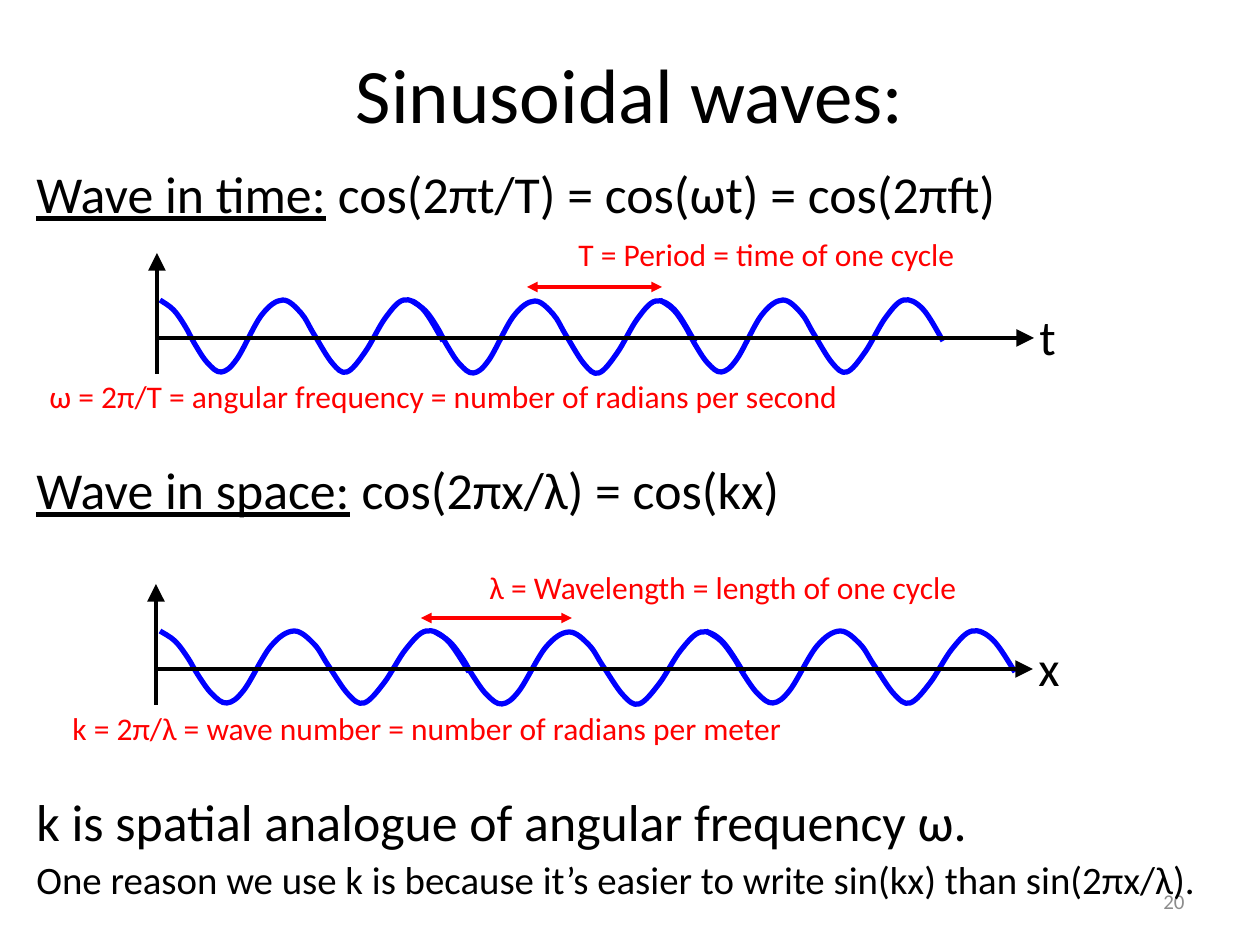
"""Build the slide on sinusoidal waves in time and in space."""
from lxml import etree
from pptx import Presentation
from pptx.dml.color import RGBColor
from pptx.enum.shapes import MSO_CONNECTOR
from pptx.enum.text import MSO_ANCHOR, PP_ALIGN
from pptx.oxml.ns import qn
from pptx.util import Inches, Pt

BLACK = RGBColor(0x00, 0x00, 0x00)
BLUE = RGBColor(0x00, 0x00, 0xFF)
RED = RGBColor(0xFF, 0x00, 0x00)
GRAY = RGBColor(0x8C, 0x8C, 0x8C)
STRAIGHT = MSO_CONNECTOR.STRAIGHT
TOP, MIDDLE = MSO_ANCHOR.TOP, MSO_ANCHOR.MIDDLE
LEFT, CENTER, RIGHT = PP_ALIGN.LEFT, PP_ALIGN.CENTER, PP_ALIGN.RIGHT

FONT = "Calibri"
PX_PER_INCH = 126
CURVE_WIDTH = 309
CURVE = [(0, 1), (15, 11), (28, 28), (38, 45), (52, 64), (67, 73),
         (84, 60), (111, 16), (134, 1), (154, 14), (168, 35), (188, 64),
         (204, 73), (224, 53), (246, 19), (266, 1), (287, 10), (309, 42)]

BODY = [
    ("Wave in time:", " cos(2πt/T) = cos(ωt) = cos(2πft)", 29.6, 0),
    ("Wave in space:", " cos(2πx/λ) = cos(kx)", 29.6, 137),
    ("", "k is spatial analogue of angular frequency ω.", 29.6, 157.5),
    ("", "One reason we use k is because it’s easier to write sin(kx) than sin(2πx/λ).", 22.2, 5),
]


def px(n):
    return round(n * Inches(1) / PX_PER_INCH)


class WaveSlide:
    """Holds the style and the current slide, and draws each kind of element."""

    def __init__(self, slide):
        self.slide = slide
        self.shapes = slide.shapes

    def start_group(self):
        self.shapes = self.slide.shapes.add_group_shape().shapes

    def style(self, r, size, color, underline=False):
        r.font.name = FONT
        r.font.size = Pt(size)
        r.font.color.rgb = color
        r.font.underline = underline

    def frame(self, x, y, w, h, anchor=TOP):
        tf = self.shapes.add_textbox(px(x), px(y), px(w), px(h)).text_frame
        tf.word_wrap = True
        tf.vertical_anchor = anchor
        return tf

    def text(self, x, y, w, h, text, size, color, align=LEFT, anchor=TOP):
        tf = self.frame(x, y, w, h, anchor)
        tf.text = text
        p = tf.paragraphs[0]
        p.alignment = align
        self.style(p.runs[0], size, color)

    def body(self, x, y, w, h, lines):
        tf = self.frame(x, y, w, h)
        for i, (label, rest, size, gap) in enumerate(lines):
            p = tf.add_paragraph() if i else tf.paragraphs[0]
            p.line_spacing = 0.9
            p.space_before = Pt(gap)
            for text, underline in ((label, True), (rest, False)):
                if text:
                    r = p.add_run()
                    r.text = text
                    self.style(r, size, BLACK, underline)

    def arrow(self, x1, y1, x2, y2, color, ends=("tailEnd",), head="med"):
        c = self.shapes.add_connector(STRAIGHT, px(x1), px(y1), px(x2), px(y2))
        c.line.color.rgb = color
        c.line.width = Pt(2)
        ln = c.line._get_or_add_ln()
        for end in ends:
            etree.SubElement(ln, qn("a:" + end), type="triangle", w=head, len=head)
        etree.SubElement(c._element.spPr, qn("a:effectLst"))

    def curve(self, x, y, w):
        points = [(px(x + u * w / CURVE_WIDTH), px(y + v)) for u, v in CURVE]
        builder = self.shapes.build_freeform(*points[0])
        builder.add_line_segments(points[1:], close=False)
        sp = builder.convert_to_shape()
        self.smooth(sp, points)
        sp.shadow.inherit = False
        sp.fill.background()
        sp.line.color.rgb = BLUE
        sp.line.width = Pt(3)

    def smooth(self, sp, points):
        padded = [points[0], *points, points[-1]]
        segments = list(sp._element.iter(qn("a:lnTo")))
        for segment, a, b, c, d in zip(segments, padded, padded[1:], padded[2:], padded[3:]):
            segment.tag = qn("a:cubicBezTo")
            controls = [[q + (t - s) / 6 for q, s, t in zip(b, a, c)],
                        [q - (t - s) / 6 for q, s, t in zip(c, b, d)]]
            for i, (cx, cy) in enumerate(controls):
                pt = etree.Element(qn("a:pt"), x=str(round(cx - sp.left)),
                                   y=str(round(cy - sp.top)))
                segment.insert(i, pt)

    def wave(self, x, y, starts, width, cycle, axis, cycle_note, rate_note):
        self.start_group()
        for i, start in enumerate(starts):
            self.curve(start, y - 39 + i % 2, width)
        self.arrow(x, y + 36, x, y - 85, BLACK, head="lg")
        self.arrow(x, y, x + 877, y, BLACK, head="lg")
        self.arrow(cycle[0], y - 51, cycle[1], y - 51, RED, ("headEnd", "tailEnd"))
        for (left, top, w), note in (cycle_note, rate_note):
            self.text(left, top, w, 63, note, 18, RED)
        self.text(x + 870, y - 38, 37, 72, axis, 28, BLACK)


def main():
    prs = Presentation()
    prs.slide_width, prs.slide_height = Inches(10), Inches(7.5)
    s = WaveSlide(prs.slides.add_slide(prs.slide_layouts[6]))
    s.text(903, 876, 294, 50, "20", 12, GRAY, RIGHT, MIDDLE)
    s.text(63, 38, 1134, 110, "Sinusoidal waves:", 44, BLACK, CENTER, MIDDLE)
    s.body(24, 163, 1197, 782, BODY)
    s.wave(156, 669, (160, 435, 706), 309, (421, 572), "x",
           ((477, 562, 714), "λ = Wavelength = length of one cycle"),
           ((60, 703, 1057), "k = 2π/λ = wave number = number of radians per meter"))
    s.wave(157, 338, (160, 412, 660), 283, (527, 662), "t",
           ((566, 229, 583), "T = Period = time of one cycle"),
           ((37, 371, 1186), "ω = 2π/T = angular frequency = number of radians per second"))
    prs.save("out.pptx")


if __name__ == "__main__":
    main()
